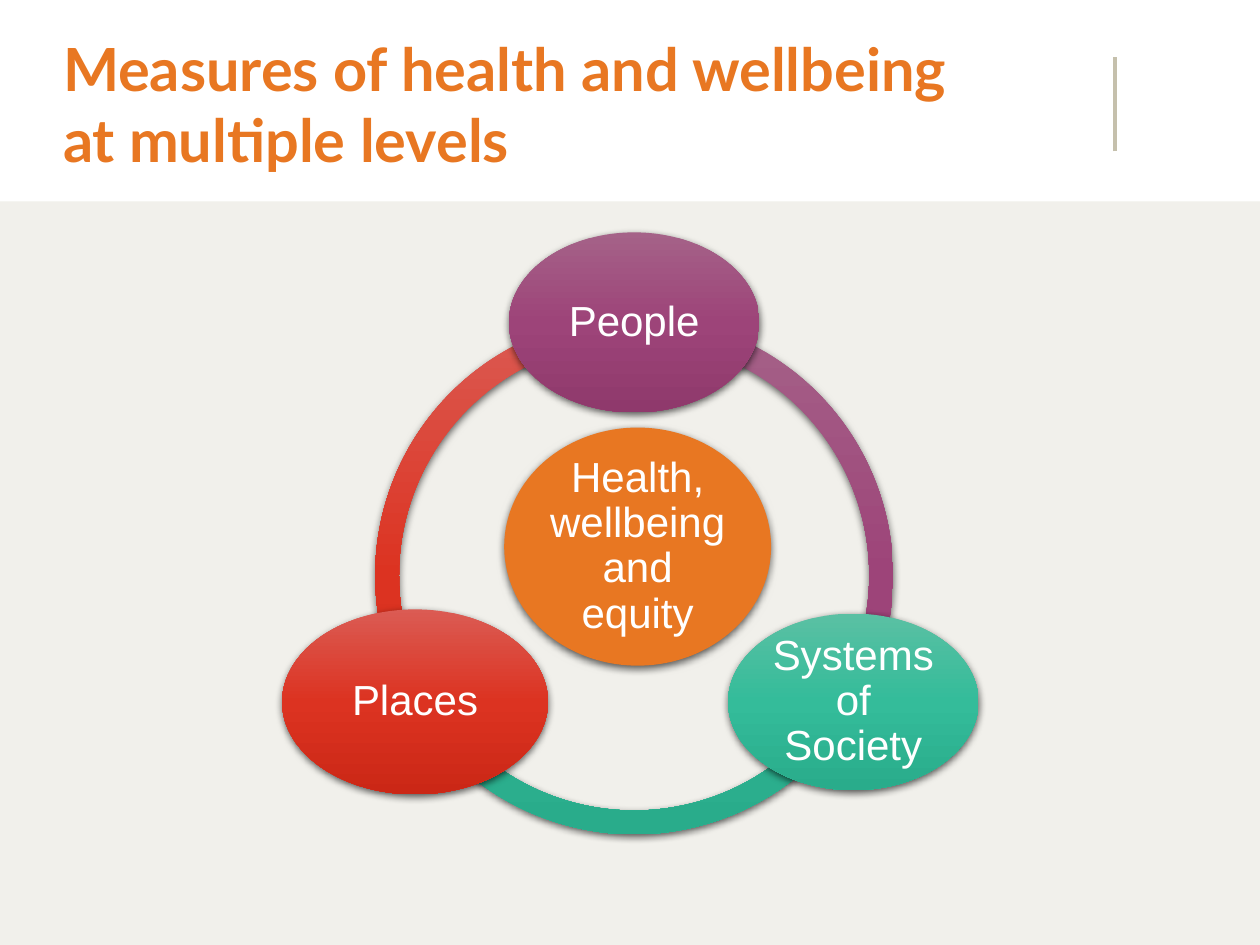
from copy import deepcopy
from dataclasses import dataclass
from math import cos, radians, sin

from lxml.etree import SubElement
from pptx import Presentation
from pptx.dml.color import RGBColor
from pptx.enum.shapes import MSO_CONNECTOR as Connector, MSO_SHAPE as Shape
from pptx.enum.text import MSO_ANCHOR as Anchor, PP_ALIGN as Align
from pptx.oxml.ns import qn
from pptx.util import Cm, Pt


@dataclass(frozen=True)
class Theme:
    orange: str = "E87722"
    white: str = "FFFFFF"
    panel: str = "F1F0EB"
    divider: str = "C5C0AC"
    shadow: str = "000000"
    # Gradients run from top to bottom
    purple: tuple = ("A56288", "9D4479", "8F396C")
    green: tuple = ("5AC0A3", "34BC9A", "29AC8B")
    red: tuple = ("DB5B53", "DC3321", "CB2716")
    title_font: str = "Lato"
    body_font: str = "Arial"
    title_size: int = 34
    body_size: int = 24


THEME = Theme()
WIDTH, HEIGHT = 25.4, 19.05


@dataclass(frozen=True)
class Box:
    left: float
    top: float
    width: float
    height: float

    def lengths(self):
        return [Cm(value) for value in (self.left, self.top, self.width, self.height)]


def centred_box(x, y, width, height):
    return Box(x - width / 2, y - height / 2, width, height)


def color(value):
    return RGBColor.from_string(value)


def write_text(shape, text, *, font, size, fill, bold=False, align=Align.LEFT,
               spacing=None, insets=(0.08, 0.08, 0.08, 0.08)):
    frame = shape.text_frame
    frame.word_wrap = True
    frame.vertical_anchor = Anchor.MIDDLE
    (frame.margin_left, frame.margin_top,
     frame.margin_right, frame.margin_bottom) = [Cm(inset) for inset in insets]
    paragraph = frame.paragraphs[0]
    paragraph.alignment = align
    paragraph.line_spacing = spacing
    run = paragraph.add_run()
    run.text = text
    run.font.name, run.font.size, run.font.bold = font, Pt(size), bold
    run.font.color.rgb = color(fill)


def paint(shape, fill):
    """Fill with one colour, or with a vertical gradient of three."""
    if isinstance(fill, str):
        shape.fill.solid()
        shape.fill.fore_color.rgb = color(fill)
        return
    shape.fill.gradient()
    shape.fill.gradient_angle = 270
    stop_list = shape._element.spPr.find(".//" + qn("a:gsLst"))
    stop_list.append(deepcopy(stop_list[-1]))
    for stop, position, value in zip(shape.fill.gradient_stops, (0, 0.5, 1), fill):
        stop.position = position
        stop.color.rgb = color(value)


def add_soft_shadow(shape):
    effects = shape._element.spPr.find(qn("a:effectLst"))
    outer = SubElement(effects, qn("a:outerShdw"), blurRad=str(Pt(4.5)),
                       dist=str(Pt(1.5)), dir="5400000", rotWithShape="0")
    tone = SubElement(outer, qn("a:srgbClr"), val=THEME.shadow)
    SubElement(tone, qn("a:alpha"), val="63000")


def add_figure(slide, kind, box, fill, shadow=True):
    shape = slide.shapes.add_shape(kind, *box.lengths())
    paint(shape, fill)
    shape.line.fill.background()
    shape.shadow.inherit = False
    if shadow:
        add_soft_shadow(shape)
    return shape


def build_header(slide, box):
    # Title
    title = slide.shapes.title
    title.left, title.top, title.width, title.height = Box(
        box.left + 1.27, box.top + 0.64, 18.42, 2.87).lengths()
    write_text(title, "Measures of health and wellbeing at multiple levels",
               font=THEME.title_font, size=THEME.title_size, fill=THEME.orange,
               bold=True, insets=(0, 0.13, 0.25, 0.13))
    # Divider
    x = Cm(box.left + 22.48)
    divider = slide.shapes.add_connector(
        Connector.STRAIGHT, x, Cm(box.top + 3.05), x, Cm(box.top + 1.14))
    divider.line.color.rgb = color(THEME.divider)
    divider.line.width = Pt(2)
    SubElement(divider._element.spPr, qn("a:effectLst"))


def add_bubble(slide, text, box, fill):
    bubble = add_figure(slide, Shape.OVAL, box, fill)
    write_text(bubble, text, font=THEME.body_font, size=THEME.body_size,
               fill=THEME.white, align=Align.CENTER, spacing=0.9)


def build_cycle(slide, box):
    x, y = box.left + box.width / 2 + 0.07, box.top + 6.93
    ring_size, orbit = 10.44, 5.1
    # Ring segments between the bubbles, angles clockwise from the right
    for start, fill in ((150, THEME.red), (30, THEME.green), (270, THEME.purple)):
        arc = add_figure(slide, Shape.BLOCK_ARC,
                         centred_box(x, y, ring_size, ring_size), fill)
        end = (start + 120) % 360
        # Angles are held in 60000ths of a degree, scaled by 100000
        for index, value in enumerate((start * 0.6, end * 0.6, 0.046)):
            arc.adjustments[index] = value
    # Centre
    add_bubble(slide, "Health, wellbeing and equity",
               centred_box(x + 0.07, y - 0.58, 5.38, 4.8), THEME.orange)
    # Bubbles on the ring
    levels = (
        ("People", 270, 5.05, 3.63, THEME.purple),
        ("Systems of Society", 30, 5.05, 3.56, THEME.green),
        ("Places", 150, 5.36, 3.73, THEME.red),
    )
    for text, angle, width, height, fill in levels:
        turn = radians(angle)
        add_bubble(slide, text, centred_box(
            x + orbit * cos(turn), y + orbit * sin(turn), width, height), fill)


def main():
    presentation = Presentation()
    presentation.slide_width, presentation.slide_height = Cm(WIDTH), Cm(HEIGHT)
    slide = presentation.slides.add_slide(presentation.slide_layouts[5])
    header_height = 4.06
    add_figure(slide, Shape.RECTANGLE,
               Box(0, header_height, WIDTH, HEIGHT - header_height),
               THEME.panel, shadow=False)
    build_header(slide, Box(0, 0, WIDTH, header_height))
    build_cycle(slide, Box(5.69, 4.67, 14.05, 12.15))
    presentation.save("out.pptx")


if __name__ == "__main__":
    main()
